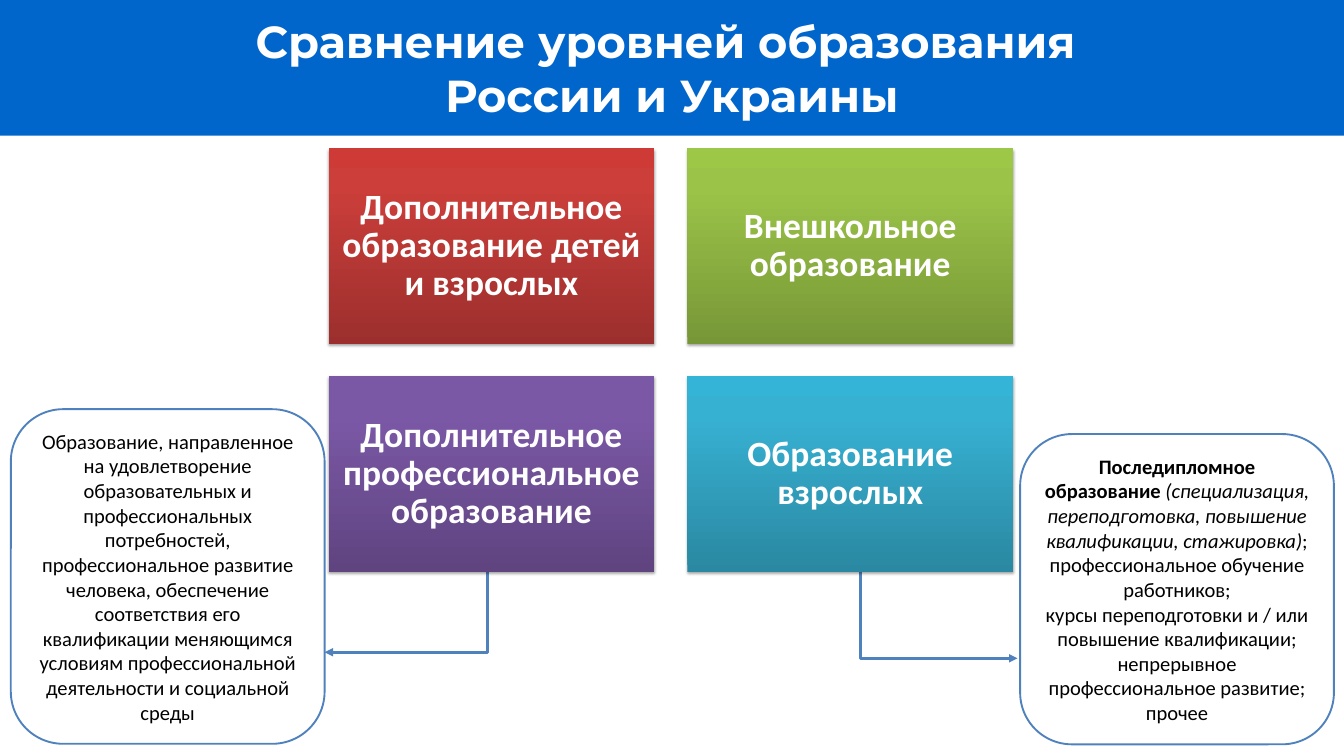
from lxml import etree
from pptx import Presentation
from pptx.dml.color import RGBColor
from pptx.enum.shapes import MSO_CONNECTOR, MSO_SHAPE
from pptx.enum.text import MSO_ANCHOR, MSO_AUTO_SIZE, PP_ALIGN
from pptx.oxml import parse_xml
from pptx.oxml.ns import nsdecls, qn
from pptx.util import Cm, Pt

ELBOW = MSO_CONNECTOR.ELBOW
RECT, ROUND = MSO_SHAPE.RECTANGLE, MSO_SHAPE.ROUNDED_RECTANGLE
MIDDLE, CENTER = MSO_ANCHOR.MIDDLE, PP_ALIGN.CENTER
NO_FIT = MSO_AUTO_SIZE.NONE

# Content: each paragraph is a list of (text, style) runs
TITLE = [[("Сравнение уровней образования ", "b")],
         [("России и Украины", "b")]]
TILES = [  # text, gradient from bottom to top; two per row
    ("Дополнительное образование детей и взрослых",
     ("9C2F2D", "CB3E3A", "CE3B37")),
    ("Внешкольное образование", ("779737", "9BC348", "9DC746")),
    ("Дополнительное профессиональное образование",
     ("5F4480", "7B58A6", "7C57A8")),
    ("Образование взрослых", ("2A88A2", "37B1D2", "34B4D6")),
]
NOTES = [  # place (left, top, width, height), paragraphs
    ((38.56, 16.41, 11.86, 11.73), [
        [("Последипломное образование ", "b"),
         ("(специализация, переподготовка, повышение квалификации, "
          "стажировка)", "i"),
         (";", "")],
        [("профессиональное обучение работников;", "")],
        [("курсы переподготовки и / или повышение квалификации;", "")],
        [("непрерывное профессиональное развитие; прочее", "")],
    ]),
    ((0.41, 15.47, 11.86, 12.65), [
        [("Образование, направленное на удовлетворение образовательных и "
          "профессиональных потребностей, профессиональное развитие "
          "человека, обеспечение соответствия его квалификации меняющимся "
          "условиям профессиональной деятельности и социальной среды", "")],
    ]),
]
LINKS = [(12.27, 24.66, 24.56, 21.39), (38.46, 24.89, 26.59, 21.39)]

# Theme and grid
THEME = {
    "band": "0066CC", "edge": "4F81BD", "paper": "FFFFFF",
    "title": ("Montserrat", 48, "FFFFFF"),
    "tile": ("Calibri", 38, "FFFFFF"),
    "note": ("Calibri", 22, "000000"),
}
WIDE, HIGH = 50.8, 28.58
BAND = 5.13
LEFT, TOP = 12.42, 5.61
TILE_W, TILE_H = 12.32, 7.39
STEP_X, STEP_Y = 13.56, 8.61
STOPS = (0, 80000, 100000)


def color(code):
    return RGBColor.from_string(code)


def write(shape, paras, role, inset=None, space=1.0):
    face, size, ink = THEME[role]
    frame = shape.text_frame
    frame.word_wrap = True
    frame.auto_size = NO_FIT
    frame.vertical_anchor = MIDDLE
    if inset is not None:
        frame.margin_left = frame.margin_right = Cm(inset)
        frame.margin_top = frame.margin_bottom = Cm(inset)
    for i, runs in enumerate(paras):
        para = frame.add_paragraph() if i else frame.paragraphs[0]
        para.alignment = CENTER
        para.line_spacing = space
        para.space_before = Pt(0)
        for text, style in runs:
            run = para.add_run()
            run.text = text
            font = run.font
            font.name, font.size = face, Pt(size)
            font.bold, font.italic = style == "b", style == "i"
            font.color.rgb = color(ink)


def add_box(slide, kind, place):
    shape = slide.shapes.add_shape(kind, *map(Cm, place))
    shape.shadow.inherit = False
    return shape


def shade(shape, codes):
    """Upward gradient and a soft shadow below."""
    shape.line.fill.background()
    stops = "".join(f'<a:gs pos="{pos}"><a:srgbClr val="{code}"/></a:gs>'
                    for pos, code in zip(STOPS, codes))
    props = shape._element.spPr
    props.find(qn("a:prstGeom")).addnext(parse_xml(
        f'<a:gradFill {nsdecls("a")} rotWithShape="1"><a:gsLst>{stops}'
        '</a:gsLst><a:lin ang="16200000" scaled="0"/></a:gradFill>'))
    props.find(qn("a:effectLst")).append(parse_xml(
        f'<a:outerShdw {nsdecls("a")} blurRad="40000" dist="23000" '
        'dir="5400000" rotWithShape="0"><a:srgbClr val="000000">'
        '<a:alpha val="35000"/></a:srgbClr></a:outerShdw>'))


def add_link(slide, ends):
    link = slide.shapes.add_connector(ELBOW, *map(Cm, ends))
    link.line.color.rgb = color(THEME["edge"])
    link.line.width = Pt(3)
    line = link.line._get_or_add_ln()
    for tag in ("a:headEnd", "a:tailEnd"):
        etree.SubElement(line, qn(tag), type="triangle")
    etree.SubElement(link._element.spPr, qn("a:effectLst"))


def main():
    deck = Presentation()
    deck.slide_width, deck.slide_height = Cm(WIDE), Cm(HIGH)
    slide = deck.slides.add_slide(deck.slide_layouts[5])

    # Title band
    title = slide.shapes.title
    title.left, title.top = Cm(0), Cm(0)
    title.width, title.height = Cm(WIDE), Cm(BAND)
    title.fill.solid()
    title.fill.fore_color.rgb = color(THEME["band"])
    write(title, TITLE, "title", inset=0)

    # Arrows go behind the tiles
    for ends in LINKS:
        add_link(slide, ends)

    # Tiles in a grid of two columns
    for i, (text, codes) in enumerate(TILES):
        row, col = divmod(i, 2)
        place = (LEFT + col * STEP_X, TOP + row * STEP_Y, TILE_W, TILE_H)
        tile = add_box(slide, RECT, place)
        shade(tile, codes)
        write(tile, [[(text, "b")]], "tile", inset=0.41, space=0.9)

    # Notes at the sides
    for place, paras in NOTES:
        note = add_box(slide, ROUND, place)
        note.fill.solid()
        note.fill.fore_color.rgb = color(THEME["paper"])
        note.line.color.rgb = color(THEME["edge"])
        note.line.width = Pt(2)
        write(note, paras, "note")

    deck.save("out.pptx")


if __name__ == "__main__":
    main()
